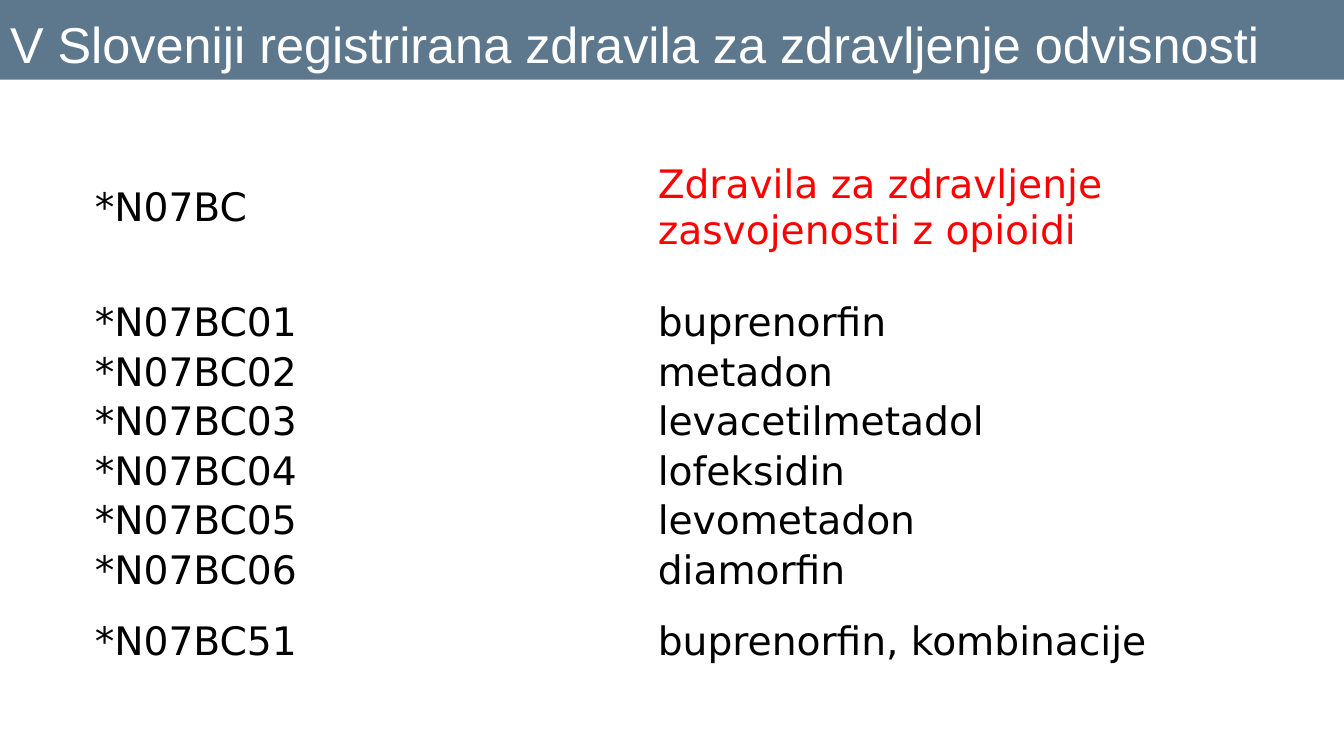
from pptx import Presentation
from pptx.dml.color import RGBColor as Rgb
from pptx.enum.shapes import MSO_SHAPE as Shape
from pptx.enum.text import MSO_ANCHOR as Anchor, PP_ALIGN as Align
from pptx.util import Inches, Pt

WIDE = 13.33
DRUGS = [
    ("*N07BC", "Zdravila za zdravljenje zasvojenosti z opioidi"),
    ("*N07BC01", "buprenorfin"),
    ("*N07BC02", "metadon"),
    ("*N07BC03", "levacetilmetadol"),
    ("*N07BC04", "lofeksidin"),
    ("*N07BC05", "levometadon"),
    ("*N07BC06", "diamorfin"),
    ("*N07BC51", "buprenorfin, kombinacije"),
]
HEIGHTS = [1.79] + [0.49] * 6 + [0.92]


def tint(code):
    return Rgb.from_string(code)


def apply(item, values):
    for name, value in values.items():
        setattr(item, name, value)


def style(para, face, size, color):
    para.alignment = Align.LEFT
    apply(para.font, {"name": face, "size": Pt(size), "bold": False})
    para.font.color.rgb = tint(color)


def add_title(slide, text):
    title = slide.shapes.title
    apply(title, {"left": Inches(0), "top": Inches(0.08),
                  "width": Inches(WIDE), "height": Inches(0.7)})
    frame = title.text_frame
    frame.text = text
    apply(frame, {"vertical_anchor": Anchor.BOTTOM, "word_wrap": True,
                  "margin_left": Inches(0.1), "margin_right": Inches(0.1),
                  "margin_top": Inches(0.05), "margin_bottom": Inches(0.05)})
    style(frame.paragraphs[0], "Arial", 36, "FFFFFF")


def add_bar(slide, color):
    bar = slide.shapes.add_shape(Shape.RECTANGLE, 0, 0, Inches(WIDE), Inches(0.79))
    bar.shadow.inherit = False
    bar.fill.solid()
    bar.fill.fore_color.rgb = tint(color)
    bar.line.fill.background()
    # The bar lies behind the title
    slide.shapes.title.element.addprevious(bar.element)


def fill_cell(cell, text, color):
    cell.text = text
    cell.fill.background()
    apply(cell, {"vertical_anchor": Anchor.MIDDLE,
                 "margin_left": Inches(0.02), "margin_right": Inches(0.02),
                 "margin_top": Inches(0.02), "margin_bottom": Inches(0.02)})
    style(cell.text_frame.paragraphs[0], "DejaVu Sans", 28, color)


def add_grid(slide, rows):
    table = slide.shapes.add_table(len(rows), 2, Inches(0.92), Inches(1.17),
                                   Inches(11.17), Inches(sum(HEIGHTS))).table
    apply(table, {"first_row": False, "horz_banding": False})
    for row, high in zip(table.rows, HEIGHTS):
        row.height = Inches(high)
    for r, pair in enumerate(rows):
        for c, text in enumerate(pair):
            # Only the group name is red
            fill_cell(table.cell(r, c), text, "FF0000" if (r, c) == (0, 1) else "000000")


def main():
    deck = Presentation()
    apply(deck, {"slide_width": Inches(WIDE), "slide_height": Inches(7.5)})
    slide = deck.slides.add_slide(deck.slide_layouts[5])

    # Heading
    add_title(slide, "V Sloveniji registrirana zdravila za zdravljenje odvisnosti")
    add_bar(slide, "5D778D")

    # Drug codes and names
    add_grid(slide, DRUGS)

    deck.save("out.pptx")


if __name__ == "__main__":
    main()
